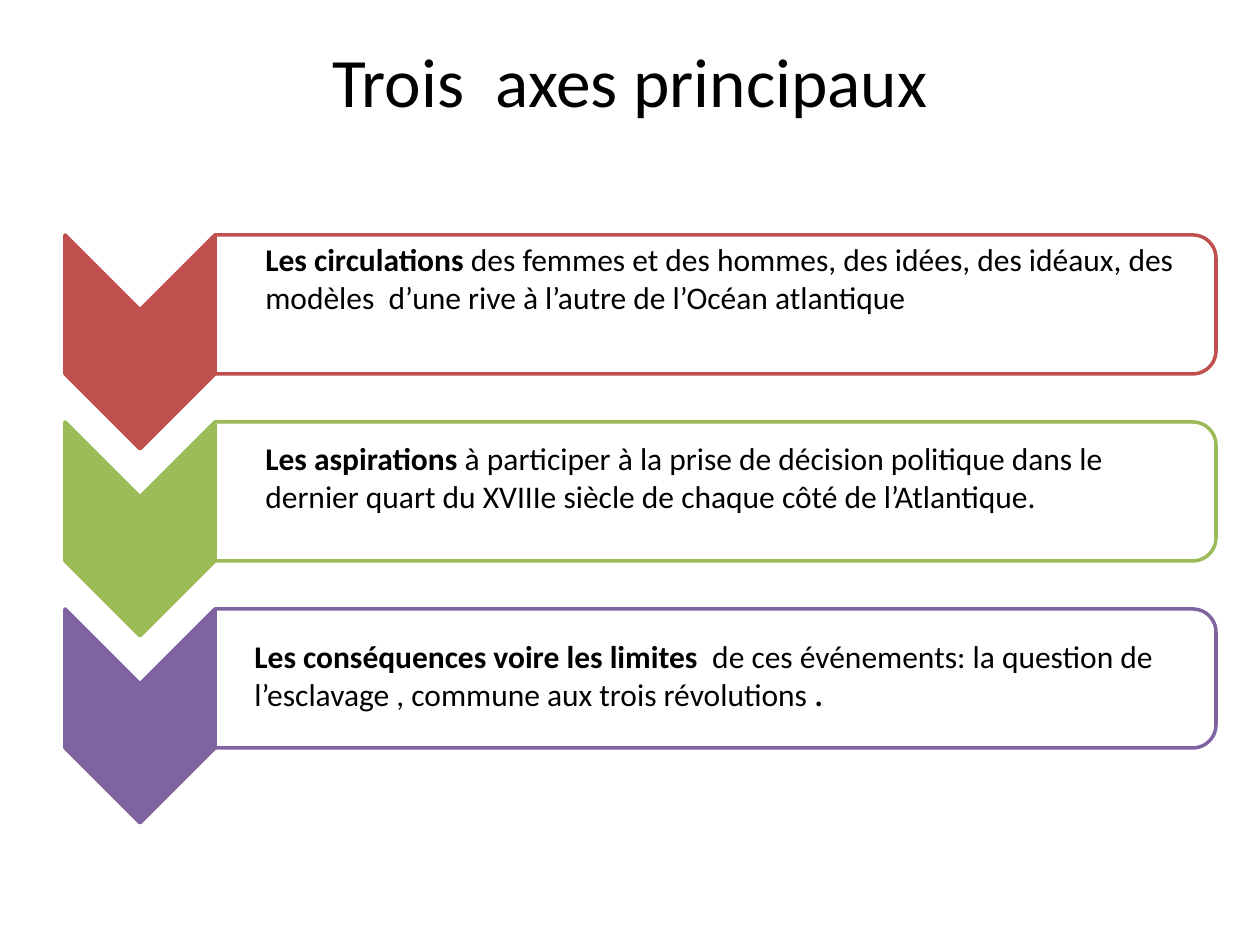
import pptx
import pptx.util
import pptx.dml.color
import pptx.enum.shapes
import pptx.enum.text
import pptx.oxml.ns
from lxml import etree

PX = 914400 / 126
KIND = pptx.enum.shapes.MSO_SHAPE
ALIGN = pptx.enum.text.PP_ALIGN

# Colour, text offset (left, top, width), bold lead, body, bold end
ROWS = [
    ("C0504D", (188, -1, 942), "Les circulations ",
     "des femmes et des hommes, des idées, des idéaux, des modèles  "
     "d’une rive à l’autre de l’Océan atlantique", ""),
    ("9BBB59", (188, 11, 942), "Les aspirations ",
     "à participer à la prise de décision politique dans le dernier quart "
     "du XVIIIe siècle de chaque côté de l’Atlantique.", ""),
    ("8064A2", (177, 22, 951), "Les conséquences voire les limites  ",
     "de ces événements: la question de l’esclavage , commune aux trois "
     "révolutions ", "."),
]


def emu(px):
    return pptx.util.Emu(round(px * PX))


def color(code):
    return pptx.dml.color.RGBColor.from_string(code)


def style(run, size, bold=False):
    run.font.name = "Calibri"
    run.font.size = pptx.util.Pt(size)
    run.font.bold = bold
    run.font.color.rgb = color("000000")


def add_text(slide, box, parts, size, align=ALIGN.LEFT):
    """Add a text box whose parts are (text, bold) pairs."""
    frame = slide.shapes.add_textbox(*map(emu, box)).text_frame
    frame.word_wrap = True
    par = frame.paragraphs[0]
    par.alignment = align
    for text, bold in parts:
        if text:
            run = par.add_run()
            run.text = text
            style(run, size, bold)
    return frame


def add_turned(slide, kind, box, fill, line):
    """Add a shape turned by 90 degrees that covers the given box."""
    left, top, width, height = box
    shift = (width - height) / 2
    shape = slide.shapes.add_shape(
        kind, *map(emu, (left + shift, top - shift, height, width)))
    shape.rotation = 90
    shape.shadow.inherit = False
    shape.fill.solid()
    shape.fill.fore_color.rgb = color(fill)
    shape.line.color.rgb = color(line)
    shape.line.width = pptx.util.Pt(2)
    return shape


def add_title(slide, box):
    frame = add_text(slide, box, [("Trois  axes principaux", False)],
                     39.6, ALIGN.CENTER)
    frame.margin_top = 0


def add_row(slide, box, row):
    left, top, width, height = box
    tone, (dx, dy, wide), lead, body, end = row
    # Chevron, then the card to its right
    arm = 150
    add_turned(slide, KIND.CHEVRON, (left, top, arm, 214), tone, tone)
    card = add_turned(slide, KIND.ROUND_2_SAME_RECTANGLE,
                      (left + arm, top, width - arm, height), "FFFFFF", tone)
    # White at 90 % opacity
    tint = card.fill._xPr.find(".//" + pptx.oxml.ns.qn("a:srgbClr"))
    etree.SubElement(tint, pptx.oxml.ns.qn("a:alpha"), val="90000")
    # Wording
    add_text(slide, (left + dx, top + dy, wide, 89),
             [(lead, True), (body, False), (end, True)], 18)


def main():
    deck = pptx.Presentation()
    deck.slide_width, deck.slide_height = emu(1260), emu(945)
    slide = deck.slides.add_slide(deck.slide_layouts[6])
    add_title(slide, (63, 38, 1134, 157))
    for i, row in enumerate(ROWS):
        add_row(slide, (65, 235 + 187 * i, 1151, 139), row)
    deck.save("out.pptx")


if __name__ == "__main__":
    main()
